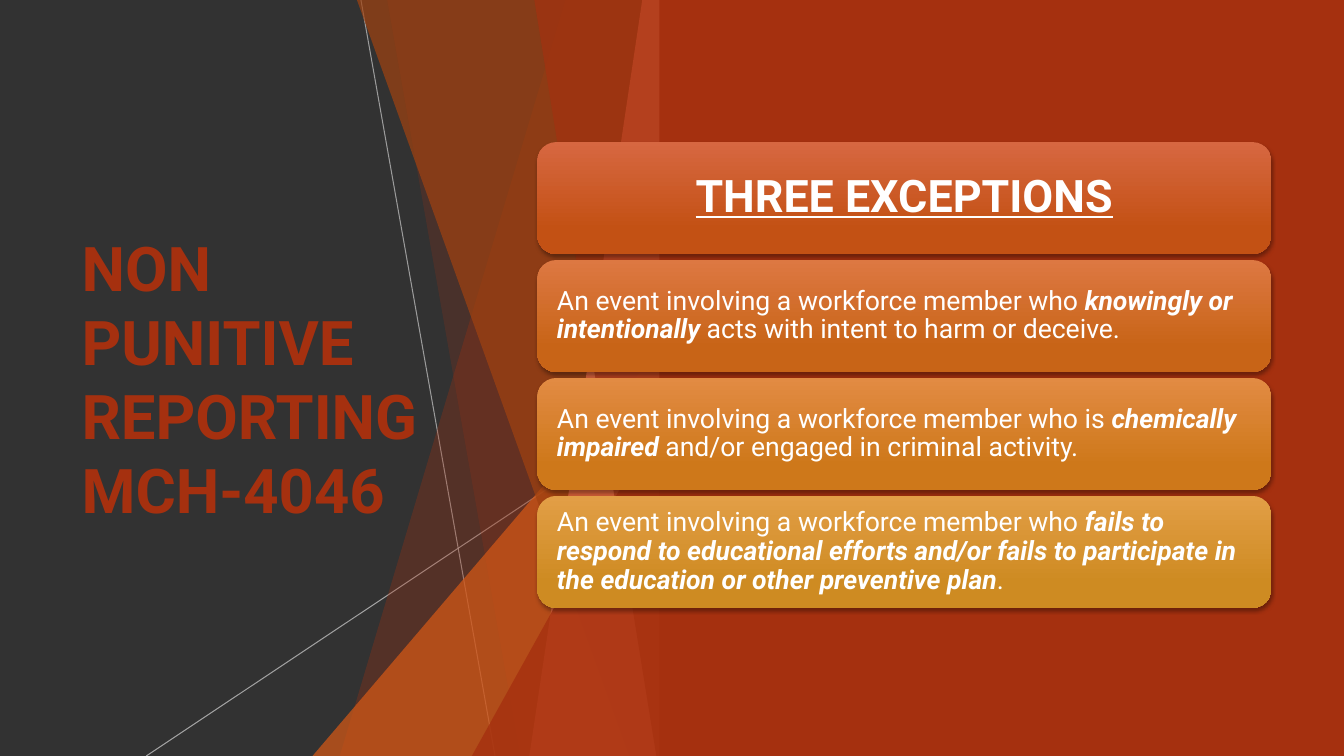
"""Build the slide on the three exceptions to non punitive reporting."""
from lxml import etree
from pptx import Presentation
from pptx import util as u
from pptx.dml.color import RGBColor
from pptx.enum import shapes, text
from pptx.oxml.ns import qn

PX = 9144
FONT = "Roboto"
EDGE, BOTTOM = 666, 750


def px(*lengths):
    return [u.Emu(n * PX) for n in lengths]


def paint(fill, colour, alpha=100):
    fill.solid()
    fill.fore_color.rgb = RGBColor.from_string(colour)
    if alpha < 100:
        clr = fill._xPr.find(qn("a:solidFill"))[0]
        etree.SubElement(clr, qn("a:alpha"), val=str(alpha * 1000))


prs = Presentation()
prs.slide_width, prs.slide_height = px(1333, BOTTOM)
s = prs.slides.add_slide(prs.slide_layouts[5])
paint(s.background.fill, "323232")

title = s.shapes.title
title.left, title.top, title.width, title.height = px(71, 151, 388, 448)
tf = title.text_frame
tf.text = "NON PUNITIVE REPORTING\vMCH-4046"
tf.word_wrap = True
tf.auto_size = text.MSO_AUTO_SIZE.NONE
tf.vertical_anchor = text.MSO_ANCHOR.MIDDLE
p = tf.paragraphs[0]
p.alignment = text.PP_ALIGN.LEFT
for r in p.runs:
    r.font.name, r.font.size, r.font.bold = FONT, u.Pt(44), True
    paint(r.font.fill, "A5300F")

for ends, alpha in [((358, 0, 491, BOTTOM), 75), ((EDGE, 403, 145, BOTTOM), 80)]:
    line = s.shapes.add_connector(shapes.MSO_CONNECTOR.STRAIGHT, *px(*ends))
    line.line.width = u.Pt(0.75)
    paint(line.line.fill, "BFBFBF", alpha)
    etree.SubElement(line._element.spPr, qn("a:effectLst"))

shards = [
    (561, 0, 337, "A5300F", 30),
    (384, 0, 516, "A5300F", 20),
    (EDGE, 333, 310, "D55816", 72),
    (354, 0, 624, "A04210", 70),
    (637, 0, 525, "EE6E4A", 70),
    (530, 0, 651, "A5300F", 65),
    (EDGE, 393, 468, "A5300F", 80),
]
for top_x, top_y, bottom_x, colour, alpha in shards:
    if top_x == EDGE:
        sp = s.shapes.add_shape(
            shapes.MSO_SHAPE.ISOSCELES_TRIANGLE,
            *px(bottom_x, top_y, EDGE - bottom_x, BOTTOM - top_y))
        sp.adjustments[0] = 1
    else:
        outline = s.shapes.build_freeform(top_x, top_y, scale=PX)
        outline.add_line_segments([(EDGE, 0), (EDGE, BOTTOM), (bottom_x, BOTTOM)])
        sp = outline.convert_to_shape()
    paint(sp.fill, colour, alpha)
    sp.line.fill.background()
    sp.shadow.inherit = False

panel = s.shapes.add_shape(shapes.MSO_SHAPE.RECTANGLE, *px(654, 0, 679, BOTTOM))
paint(panel.fill, "A5300F")
panel.line.fill.background()
panel.shadow.inherit = False

EVENT = "An event involving a workforce member who "
cards = [
    ("D76741", "C35114", ["", "THREE EXCEPTIONS"]),
    ("DD7842", "C86417", [EVENT, "knowingly or intentionally ",
                          "acts with intent to harm or deceive."]),
    ("E28B43", "CE781A", [EVENT + "is ", "chemically impaired ",
                          "and/or engaged in criminal activity."]),
    ("E29E46", "CE8B22", [EVENT, "fails to respond to educational efforts and/or fails "
                          "to participate in the education or other preventive plan", "."]),
]
for i, (light, dark, parts) in enumerate(cards):
    heading = i == 0
    card = s.shapes.add_shape(
        shapes.MSO_SHAPE.ROUNDED_RECTANGLE, *px(533, 141 + 117 * i, 728, 111))
    card.fill.gradient()
    card.fill.gradient_angle = 270
    for stop, colour, position in zip(card.fill.gradient_stops, (light, dark), (0, 0.78)):
        stop.color.rgb = RGBColor.from_string(colour)
        stop.position = position
    card.line.fill.background()
    card.shadow.inherit = False
    effects = card._element.spPr.find(qn("a:effectLst"))
    shadow = etree.SubElement(effects, qn("a:outerShdw"), blurRad=str(u.Pt(3)),
                              dist=str(u.Pt(2)), dir="5400000", rotWithShape="0")
    clr = etree.SubElement(shadow, qn("a:srgbClr"), val="000000")
    etree.SubElement(clr, qn("a:alpha"), val="35000")

    tf = card.text_frame
    tf.word_wrap = True
    tf.vertical_anchor = text.MSO_ANCHOR.MIDDLE
    tf.margin_left, tf.margin_right, tf.margin_top, tf.margin_bottom = px(14, 14, 8, 8)
    p = tf.paragraphs[0]
    p.alignment = text.PP_ALIGN.CENTER if heading else text.PP_ALIGN.LEFT
    p.line_spacing = 0.9
    for j, part in enumerate(parts):
        if not part:
            continue
        r = p.add_run()
        r.text = part
        r.font.name, r.font.size = FONT, u.Pt(32 if heading else 19)
        r.font.bold = j == 1
        r.font.italic = j == 1 and not heading
        r.font.underline = heading
        paint(r.font.fill, "FFFFFF")

prs.save("out.pptx")
